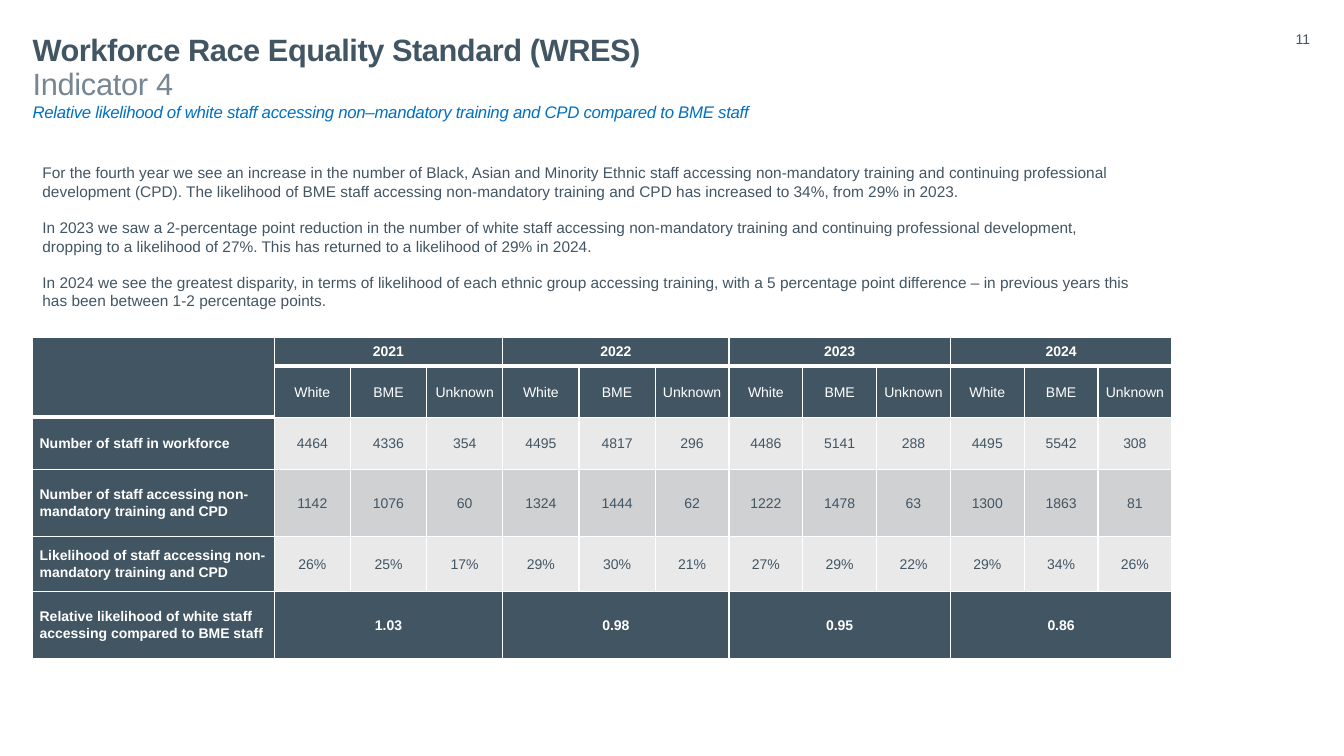
import pptx
import pptx.dml.color
import pptx.enum.text
import pptx.oxml
import pptx.oxml.ns
import pptx.util

Cm = pptx.util.Cm
Pt = pptx.util.Pt
ALIGN = pptx.enum.text.PP_ALIGN
ANCHOR = pptx.enum.text.MSO_ANCHOR

SLATE, GREY, BLUE, WHITE = "425563", "768692", "0070C0", "FFFFFF"
PALE, MID = "E9E9EA", "CFD1D3"

COMMENTARY = [
    "For the fourth year we see an increase in the number of Black, Asian and Minority Ethnic staff "
    "accessing non-mandatory training and continuing professional development (CPD). The likelihood of "
    "BME staff accessing non-mandatory training and CPD has increased to 34%, from 29% in 2023.",
    "In 2023 we saw a 2-percentage point reduction in the number of white staff accessing non-mandatory "
    "training and continuing professional development, dropping to a likelihood of 27%. This has returned "
    "to a likelihood of 29% in 2024.",
    "In 2024 we see the greatest disparity, in terms of likelihood of each ethnic group accessing training, "
    "with a 5 percentage point difference – in previous years this has been between 1-2 percentage points.",
]

YEARS = ["2021", "2022", "2023", "2024"]
GROUPS = ["White", "BME", "Unknown"]
MEASURES = [
    ("Number of staff in workforce", PALE,
     "4464 4336 354 4495 4817 296 4486 5141 288 4495 5542 308"),
    ("Number of staff accessing non-mandatory training and CPD", MID,
     "1142 1076 60 1324 1444 62 1222 1478 63 1300 1863 81"),
    ("Likelihood of staff accessing non-mandatory training and CPD", PALE,
     "26% 25% 17% 29% 30% 21% 27% 29% 22% 29% 34% 26%"),
]
RATIO_LABEL = "Relative likelihood of white staff accessing compared to BME staff"
RATIOS = ["1.03", "0.98", "0.95", "0.86"]

COLUMN_SHARES = [6.09] + [1.92] * 5 + [1.86] * 7
ROW_SHARES = [0.74, 1.28, 1.32, 1.67, 1.39, 1.68]


def colour(hex_code):
    return pptx.dml.color.RGBColor.from_string(hex_code)


def format_runs(paragraph, size, hex_code, bold=False, italic=False, tracking=None):
    for run in paragraph.runs:
        run.font.name = "Arial"
        run.font.size = Pt(size)
        run.font.bold = bold
        run.font.italic = italic
        run.font.color.rgb = colour(hex_code)
        if tracking is not None:
            run._r.get_or_add_rPr().set("spc", str(tracking))


def place(shape, box):
    shape.left, shape.top, shape.width, shape.height = (Cm(length) for length in box)


def prepare_frame(frame, inset_x=0, inset_y=0):
    frame.word_wrap = True
    frame.auto_size = pptx.enum.text.MSO_AUTO_SIZE.NONE
    frame.vertical_anchor = ANCHOR.TOP
    frame.margin_left = frame.margin_right = Cm(inset_x)
    frame.margin_top = frame.margin_bottom = Cm(inset_y)


def add_heading(slide, box):
    left, top, width, height = box
    title = slide.shapes.title
    place(title, (left, top, 17.8, 0.86))
    prepare_frame(title.text_frame)
    title.text_frame.text = "Workforce Race Equality Standard (WRES)"
    title.text_frame.paragraphs[0].alignment = ALIGN.LEFT
    format_runs(title.text_frame.paragraphs[0], 22, SLATE, bold=True, tracking=-30)

    indicator = slide.placeholders[1]
    place(indicator, (left, top + 0.86, width, height - 0.86))
    prepare_frame(indicator.text_frame)
    indicator.text_frame.text = (
        "Indicator 4\nRelative likelihood of white staff accessing non–mandatory training "
        "and CPD compared to BME staff"
    )
    for paragraph in indicator.text_frame.paragraphs:
        properties = paragraph._p.get_or_add_pPr()
        properties.set("marL", "0")
        properties.set("indent", "0")
        properties.append(pptx.oxml.parse_xml(f"<a:buNone {pptx.oxml.ns.nsdecls('a')}/>"))
        paragraph.space_before = Pt(0)
    heading, definition = indicator.text_frame.paragraphs
    format_runs(heading, 22, GREY, tracking=-20)
    format_runs(definition, 12, BLUE, italic=True, tracking=-20)


def add_page_number(slide, box):
    number = slide.shapes.add_textbox(*(Cm(length) for length in box))
    prepare_frame(number.text_frame)
    number.text_frame.text = "11"
    number.text_frame.paragraphs[0].alignment = ALIGN.RIGHT
    format_runs(number.text_frame.paragraphs[0], 10, SLATE)


def add_commentary(slide, box):
    commentary = slide.shapes.add_textbox(*(Cm(length) for length in box))
    prepare_frame(commentary.text_frame, 0.25, 0.13)
    commentary.text_frame.text = "\n".join(COMMENTARY)
    for index, paragraph in enumerate(commentary.text_frame.paragraphs):
        paragraph.space_before = Pt(12.6 if index else 0)
        format_runs(paragraph, 11, SLATE)


def add_borders(cell, thick_sides):
    properties = cell._tc.get_or_add_tcPr()
    for position, side in enumerate("LRTB"):
        width = Pt(3 if side in thick_sides else 1)
        properties.insert(position, pptx.oxml.parse_xml(
            f'<a:ln{side} {pptx.oxml.ns.nsdecls("a")} w="{width}">'
            f'<a:solidFill><a:srgbClr val="{WHITE}"/></a:solidFill></a:ln{side}>'
        ))


def format_cell(cell, text, fill, ink, bold, alignment):
    cell.fill.solid()
    cell.fill.fore_color.rgb = colour(fill)
    cell.margin_left = cell.margin_right = Cm(0.18)
    cell.margin_top = cell.margin_bottom = 0
    cell.vertical_anchor = ANCHOR.MIDDLE
    if text:
        cell.text_frame.text = text
        paragraph = cell.text_frame.paragraphs[0]
        paragraph.alignment = alignment
        paragraph.line_spacing = 1.07
        paragraph.space_after = Pt(8)
        format_runs(paragraph, 10, ink, bold=bold)


def spread(values):
    return [text for value in values for text in [value] + [""] * (len(GROUPS) - 1)]


def add_training_table(slide, box):
    left, top, width, height = box
    rows = [
        ("", spread(YEARS), SLATE, WHITE, True),
        ("", GROUPS * len(YEARS), SLATE, WHITE, False),
        *((label, values.split(), fill, SLATE, False) for label, fill, values in MEASURES),
        (RATIO_LABEL, spread(RATIOS), SLATE, WHITE, True),
    ]
    frame = slide.shapes.add_table(
        len(rows), len(COLUMN_SHARES), Cm(left), Cm(top), Cm(width), Cm(height))
    training = frame.table
    training.first_row = training.horz_banding = False
    for column, share in zip(training.columns, COLUMN_SHARES):
        column.width = Cm(width * share / sum(COLUMN_SHARES))
    for row, share in zip(training.rows, ROW_SHARES):
        row.height = Cm(height * share / sum(ROW_SHARES))

    for row_index, (label, values, fill, ink, bold) in enumerate(rows):
        for column_index, text in enumerate([label] + values):
            cell = training.cell(row_index, column_index)
            if column_index == 0:
                format_cell(cell, text, SLATE, WHITE, True, ALIGN.LEFT)
            else:
                format_cell(cell, text, fill, ink, bold, ALIGN.CENTER)
            header_end = 1 if column_index == 0 else 0
            thick_sides = "B" if row_index in (0, header_end) else ""
            if row_index == header_end + 1:
                thick_sides += "T"
            add_borders(cell, thick_sides)

    training.cell(0, 0).merge(training.cell(1, 0))
    for row_index in (0, len(rows) - 1):
        for first in range(1, len(COLUMN_SHARES), len(GROUPS)):
            last = first + len(GROUPS) - 1
            training.cell(row_index, first).merge(training.cell(row_index, last))


def main():
    deck = pptx.Presentation()
    deck.slide_width, deck.slide_height = Cm(33.87), Cm(19.05)
    slide = deck.slides.add_slide(deck.slide_layouts[1])
    add_heading(slide, (0.82, 0.77, 22.05, 2.79))
    add_page_number(slide, (32.18, 0.77, 0.84, 0.64))
    add_training_table(slide, (0.82, 8.49, 28.71, 8.1))
    add_commentary(slide, (0.82, 3.99, 28.2, 4.5))
    deck.save("out.pptx")


if __name__ == "__main__":
    main()
